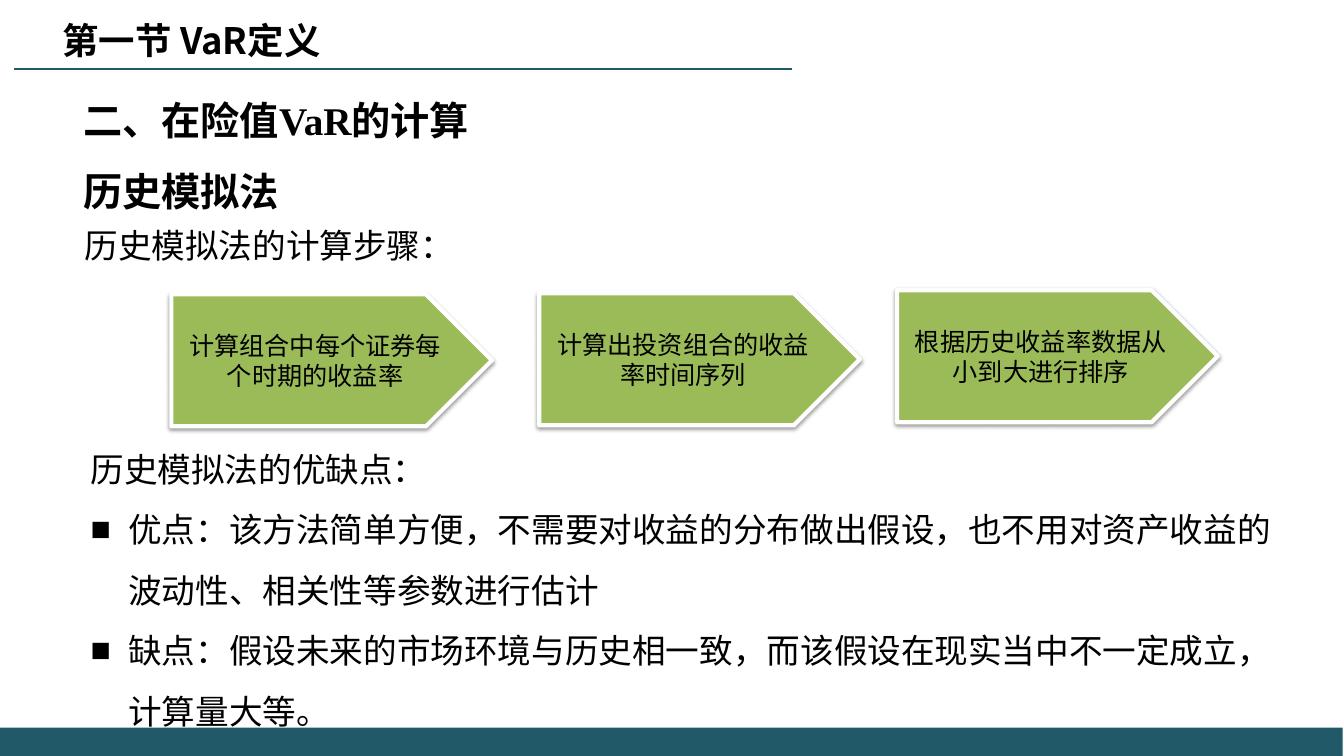
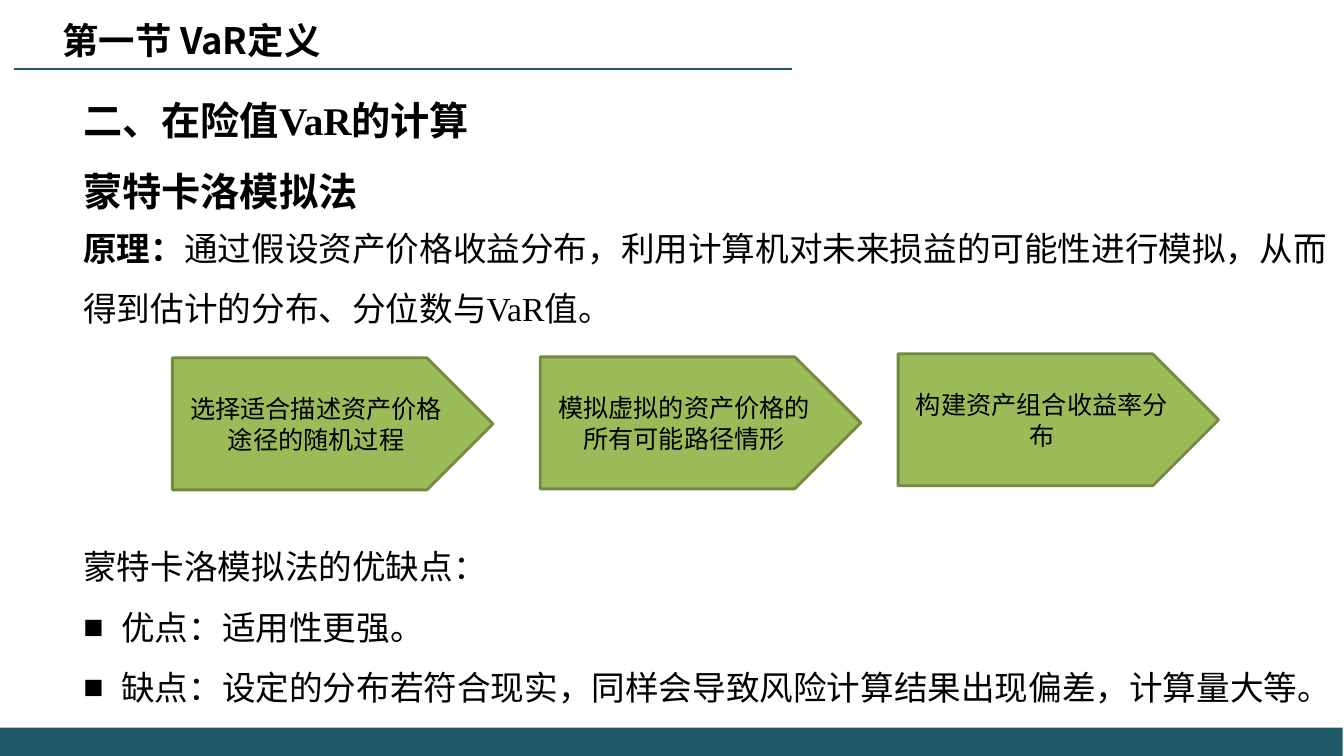
from dataclasses import dataclass

import pptx
import pptx.dml.color
import pptx.enum.shapes
import pptx.enum.text
import pptx.oxml
import pptx.oxml.ns
import pptx.presentation
import pptx.shapes.base
import pptx.slide
import pptx.text.text
import pptx.util
from lxml import etree

Pt = pptx.util.Pt
qn = pptx.oxml.ns.qn
MSO_SHAPE = pptx.enum.shapes.MSO_SHAPE
PP_ALIGN = pptx.enum.text.PP_ALIGN
MSO_ANCHOR = pptx.enum.text.MSO_ANCHOR
MSO_AUTO_SIZE = pptx.enum.text.MSO_AUTO_SIZE


@dataclass(frozen=True)
class Theme:
    teal: str = "215968"
    green: str = "9BBB59"
    dark_green: str = "738A42"
    white: str = "FFFFFF"
    text: str = "000000"
    title_size: float = 26
    heading_size: float = 28
    body_size: float = 24
    step_size: float = 18
    chinese_font: str = "Noto Sans CJK SC"
    body_font: str = "Times New Roman"
    step_font: str = "Arial"
    line_spacing: float = 1.5
    bullet_indent: float = 27


THEME = Theme()


@dataclass(frozen=True)
class Box:
    left: float
    top: float
    width: float
    height: float

    def lengths(self) -> tuple:
        return Pt(self.left), Pt(self.top), Pt(self.width), Pt(self.height)


@dataclass(frozen=True)
class TextStyle:
    size: float
    font: str
    bold: bool = False


@dataclass(frozen=True)
class Line:
    runs: tuple[tuple[str, TextStyle], ...]
    spacing: float | None = THEME.line_spacing
    bullet: bool = False


@dataclass(frozen=True)
class StepStyle:
    outline: str
    outline_width: float
    shadow: bool


@dataclass(frozen=True)
class MethodSlide:
    method: str
    intro: Line
    intro_box: Box
    steps: tuple[str, str, str]
    steps_left: float
    steps_top: float
    step_style: StepStyle
    review: tuple[str, str, str]
    review_box: Box


TITLE = TextStyle(THEME.title_size, THEME.chinese_font, True)
HEADING = TextStyle(THEME.heading_size, THEME.body_font, True)
BODY = TextStyle(THEME.body_size, THEME.body_font)
BODY_BOLD = TextStyle(THEME.body_size, THEME.body_font, True)
STEP = TextStyle(THEME.step_size, THEME.step_font)

SECTION_TITLE = "第一节 VaR定义"
TOPIC = "二、在险值VaR的计算"
TITLE_BOX = Box(37.5, 9.4, 317.5, 39)
HEADING_BOX = Box(52.5, 65.5, 367, 126)
STEP_OFFSETS = ((0, 0), (262.8, -0.7), (518.4, -2.9))
STEP_WIDTH, STEP_HEIGHT = 229, 94.3

SLIDES = (
    MethodSlide(
        method="历史模拟法",
        intro=Line((("历史模拟法的计算步骤：", BODY),)),
        intro_box=Box(53.3, 142.5, 899, 307.5),
        steps=(
            "计算组合中每个证券每个时期的收益率",
            "计算出投资组合的收益率时间序列",
            "根据历史收益率数据从小到大进行排序",
        ),
        steps_left=122.4,
        steps_top=210.2,
        step_style=StepStyle(THEME.white, 3, True),
        review=(
            "历史模拟法的优缺点：",
            "优点：该方法简单方便，不需要对收益的分布做出假设，也不用对资产收益的波动性、相关性等参数进行估计",
            "缺点：假设未来的市场环境与历史相一致，而该假设在现实当中不一定成立，计算量大等。",
        ),
        review_box=Box(57.6, 302.4, 879, 219.6),
    ),
    MethodSlide(
        method="蒙特卡洛模拟法",
        intro=Line((
            ("原理：", BODY_BOLD),
            ("通过假设资产价格收益分布，利用计算机对未来损益的可能性进行模拟，从而得到估计的分布、分位数与VaR值。", BODY),
        )),
        intro_box=Box(52.5, 144.7, 907, 394.5),
        steps=(
            "选择适合描述资产价格途径的随机过程",
            "模拟虚拟的资产价格的所有可能路径情形",
            "构建资产组合收益率分布",
        ),
        steps_left=123.1,
        steps_top=255.6,
        step_style=StepStyle(THEME.dark_green, 2, False),
        review=(
            "蒙特卡洛模拟法的优缺点：",
            "优点：适用性更强。",
            "缺点：设定的分布若符合现实，同样会导致风险计算结果出现偏差，计算量大等。",
        ),
        review_box=Box(52.5, 372.2, 907, 132.5),
    ),
)


def rgb(value: str) -> pptx.dml.color.RGBColor:
    return pptx.dml.color.RGBColor.from_string(value)


def add_run(paragraph: pptx.text.text._Paragraph, text: str, style: TextStyle) -> None:
    run = paragraph.add_run()
    run.text = text
    run.font.size = Pt(style.size)
    run.font.bold = style.bold
    run.font.name = style.font
    run.font.color.rgb = rgb(THEME.text)
    latin = run.font._element.find(qn("a:latin"))
    east_asian = etree.Element(qn("a:ea"), typeface=THEME.chinese_font)
    latin.addnext(east_asian)


def add_bullet(paragraph: pptx.text.text._Paragraph) -> None:
    properties = paragraph._p.get_or_add_pPr()
    indent = int(Pt(THEME.bullet_indent))
    properties.set("marL", str(indent))
    properties.set("indent", str(-indent))
    etree.SubElement(properties, qn("a:buFont"), typeface=THEME.step_font)
    etree.SubElement(properties, qn("a:buChar"), char="■")


def write_lines(frame: pptx.text.text.TextFrame, lines: tuple[Line, ...],
                alignment: PP_ALIGN = PP_ALIGN.LEFT) -> None:
    for index, line in enumerate(lines):
        paragraph = frame.add_paragraph() if index else frame.paragraphs[0]
        if line.bullet:
            add_bullet(paragraph)
        paragraph.alignment = alignment
        if line.spacing:
            paragraph.line_spacing = line.spacing
        for text, style in line.runs:
            add_run(paragraph, text, style)


def add_text(slide: pptx.slide.Slide, box: Box, lines: tuple[Line, ...]) -> None:
    frame = slide.shapes.add_textbox(*box.lengths()).text_frame
    frame.word_wrap = True
    frame.auto_size = MSO_AUTO_SIZE.SHAPE_TO_FIT_TEXT
    write_lines(frame, lines)


def add_title(slide: pptx.slide.Slide) -> None:
    title = slide.shapes.title
    title.left, title.top, title.width, title.height = TITLE_BOX.lengths()
    frame = title.text_frame
    frame.word_wrap = True
    frame.vertical_anchor = MSO_ANCHOR.TOP
    frame.auto_size = MSO_AUTO_SIZE.SHAPE_TO_FIT_TEXT
    write_lines(frame, (Line(((SECTION_TITLE, TITLE),), None),))


def add_soft_shadow(shape: pptx.shapes.base.BaseShape) -> None:
    effects = shape.element.spPr.find(qn("a:effectLst"))
    shadow = etree.SubElement(
        effects, qn("a:outerShdw"), blurRad=str(int(Pt(3.1))),
        dist=str(int(Pt(1.6))), dir="5400000", rotWithShape="0")
    colour = etree.SubElement(shadow, qn("a:srgbClr"), val=THEME.text)
    etree.SubElement(colour, qn("a:alpha"), val="38000")


def add_steps(slide: pptx.slide.Slide, content: MethodSlide) -> None:
    group = slide.shapes.add_group_shape()
    style = content.step_style
    for (x_offset, y_offset), text in zip(STEP_OFFSETS, content.steps):
        box = Box(content.steps_left + x_offset, content.steps_top + y_offset,
                  STEP_WIDTH, STEP_HEIGHT)
        step = group.shapes.add_shape(MSO_SHAPE.PENTAGON, *box.lengths())
        step.fill.solid()
        step.fill.fore_color.rgb = rgb(THEME.green)
        step.line.color.rgb = rgb(style.outline)
        step.line.width = Pt(style.outline_width)
        step.shadow.inherit = False
        if style.shadow:
            add_soft_shadow(step)
        step.text_frame.word_wrap = True
        step.text_frame.vertical_anchor = MSO_ANCHOR.MIDDLE
        write_lines(step.text_frame, (Line(((text, STEP),), None),), PP_ALIGN.CENTER)


def decorate_layout(layout: pptx.slide.SlideLayout, slide: pptx.slide.Slide) -> None:
    """Draw the band and rule on a slide, then move them to its layout."""
    for placeholder in list(layout.placeholders):
        if placeholder.placeholder_format.idx:
            placeholder.element.getparent().remove(placeholder.element)

    # Bottom band
    band = slide.shapes.add_shape(MSO_SHAPE.RECTANGLE, *Box(0, 519.8, 959, 20.2).lengths())
    band.fill.solid()
    band.fill.fore_color.rgb = rgb(THEME.teal)
    band.line.fill.background()
    band.shadow.inherit = False

    # Rule under the title
    rule = slide.shapes.add_connector(
        pptx.enum.shapes.MSO_CONNECTOR.STRAIGHT, Pt(566), Pt(49), Pt(10), Pt(49))
    rule.line.color.rgb = rgb(THEME.teal)
    rule.line.width = Pt(1.5)
    etree.SubElement(rule.element.spPr, qn("a:effectLst"))

    for shape in (band, rule):
        layout.shapes.element.append(shape.element)


def fill_slide(slide: pptx.slide.Slide, content: MethodSlide) -> None:
    add_title(slide)
    add_text(slide, HEADING_BOX, (
        Line(((TOPIC, HEADING),), None),
        Line(((content.method, HEADING),)),
    ))
    add_text(slide, content.intro_box, (content.intro,))
    add_steps(slide, content)
    add_text(slide, content.review_box, tuple(
        Line(((text, BODY),), bullet=index > 0)
        for index, text in enumerate(content.review)))


def main() -> None:
    presentation = pptx.Presentation()
    presentation.slide_width = Pt(960)
    presentation.slide_height = Pt(540)
    layout = presentation.slide_layouts[5]
    slides = [presentation.slides.add_slide(layout) for _ in SLIDES]
    decorate_layout(layout, slides[0])
    for slide, content in zip(slides, SLIDES):
        fill_slide(slide, content)
    presentation.save("out.pptx")


if __name__ == "__main__":
    main()
